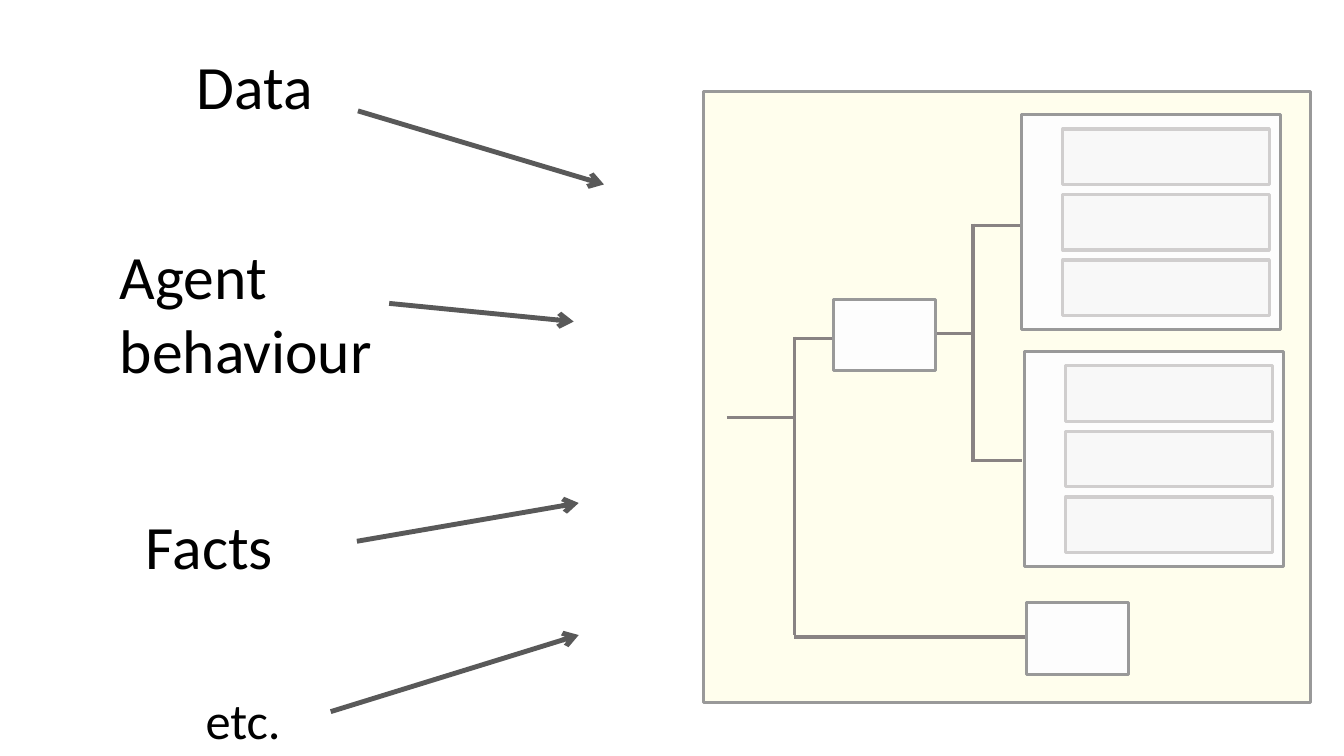
import pptx
import pptx.util
import pptx.dml.color
import pptx.enum.shapes
import pptx.enum.text
import pptx.oxml.ns
import lxml.etree

Inches = pptx.util.Inches
COLORS = {
    "panel": "FFFEED", "box": "FDFDFD", "slot": "F8F8F8",
    "box_line": "999999", "slot_line": "D0CECE",
    "tree": "898383", "arrow": "595959", "text": "000000",
}


def color(name):
    return pptx.dml.color.RGBColor.from_string(COLORS[name])


def add_box(slide, left, top, width, height, fill, line):
    shape = slide.shapes.add_shape(
        pptx.enum.shapes.MSO_SHAPE.RECTANGLE,
        Inches(left), Inches(top), Inches(width), Inches(height))
    shape.shadow.inherit = False
    shape.fill.solid()
    shape.fill.fore_color.rgb = color(fill)
    shape.line.color.rgb = color(line)
    shape.line.width = pptx.util.Pt(2.25)


def add_line(slide, start, end, line, width, arrow=False):
    connector = slide.shapes.add_connector(
        pptx.enum.shapes.MSO_CONNECTOR.STRAIGHT,
        *(Inches(value) for value in (*start, *end)))
    connector.line.color.rgb = color(line)
    connector.line.width = pptx.util.Pt(width)
    qn = pptx.oxml.ns.qn
    if arrow:
        outline = connector.line._get_or_add_ln()
        lxml.etree.SubElement(outline, qn("a:tailEnd"), type="arrow")
    lxml.etree.SubElement(connector._element.spPr, qn("a:effectLst"))


def add_label(slide, left, top, width, height, text, size):
    shape = slide.shapes.add_textbox(
        Inches(left), Inches(top), Inches(width), Inches(height))
    frame = shape.text_frame
    frame.word_wrap = True
    frame.auto_size = pptx.enum.text.MSO_AUTO_SIZE.SHAPE_TO_FIT_TEXT
    run = frame.paragraphs[0].add_run()
    run.text = text
    run.font.size = pptx.util.Pt(size)
    run.font.name = "Calibri"
    run.font.color.rgb = color("text")


def add_inputs(slide, left, top):
    # Each input: label box, text, size, arrow start and end
    inputs = [
        ((0.76, 0, 1.44, 0.84), "Data", 44, (2.46, 0.67), (4.9, 1.4)),
        ((0, 1.88, 2.97, 1.58), "Agent behaviour", 44, (2.77, 2.58), (4.6, 2.76)),
        ((0.26, 4.56, 1.84, 0.84), "Facts", 44, (2.45, 4.94), (4.65, 4.56)),
        ((0.85, 6.36, 1.84, 0.71), "etc.", 36, (2.19, 6.63), (4.65, 5.87)),
    ]
    for (x, y, width, height), text, size, start, end in inputs:
        add_label(slide, left + x, top + y, width, height, text, size)
        add_line(slide, (left + start[0], top + start[1]),
                 (left + end[0], top + end[1]), "arrow", 3.5, arrow=True)


def add_slot_group(slide, left, top):
    add_box(slide, left, top, 2.57, 2.13, "box", "box_line")
    for row in range(3):
        add_box(slide, left + 0.41, top + 0.14 + 0.65 * row, 2.05, 0.55,
                "slot", "slot_line")


def add_tree_panel(slide, left, top, width, height):
    add_box(slide, left, top, width, height, "panel", "box_line")

    # Branches, from the root to the leaves
    branches = [
        ((0.23, 3.23), (0.9, 3.23)),
        ((0.9, 2.43), (0.9, 5.39)),
        ((0.89, 2.45), (1.28, 2.45)),
        ((0.9, 5.41), (3.19, 5.41)),
        ((2.24, 2.4), (2.67, 2.4)),
        ((2.67, 1.31), (2.67, 3.67)),
        ((2.69, 1.33), (3.16, 1.33)),
        ((2.69, 3.66), (3.16, 3.66)),
    ]
    for start, end in branches:
        add_line(slide, (left + start[0], top + start[1]),
                 (left + end[0], top + end[1]), "tree", 2.25)

    # Single nodes
    for x, y in ((1.29, 2.06), (3.2, 5.07)):
        add_box(slide, left + x, top + y, 1.01, 0.71, "box", "box_line")

    # Leaves with three slots each
    for x, y in ((3.15, 0.23), (3.18, 2.58)):
        add_slot_group(slide, left + x, top + y)


def main():
    presentation = pptx.Presentation()
    presentation.slide_width = Inches(13.33)
    presentation.slide_height = Inches(7.5)
    slide = presentation.slides.add_slide(presentation.slide_layouts[6])
    add_tree_panel(slide, 6.98, 0.91, 6.02, 6.06)
    add_inputs(slide, 1.09, 0.43)
    presentation.save("out.pptx")


if __name__ == "__main__":
    main()
